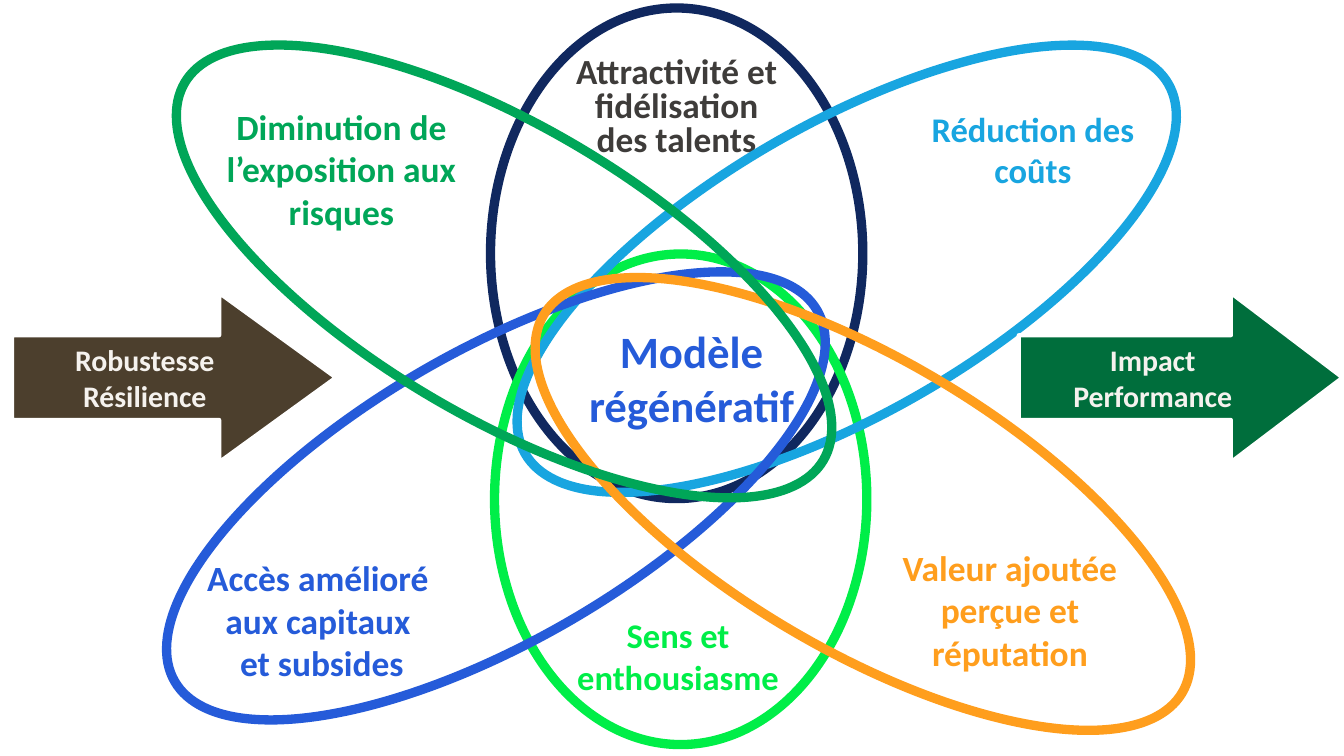
from pptx import Presentation
from pptx.dml.color import RGBColor
from pptx.enum.shapes import MSO_SHAPE
from pptx.enum.text import MSO_ANCHOR, PP_ALIGN
from pptx.util import Inches, Pt

NAVY = RGBColor(0x10, 0x28, 0x5F)
LIME = RGBColor(0x00, 0xEE, 0x48)
SKY = RGBColor(0x18, 0xA5, 0xE0)
BLUE = RGBColor(0x25, 0x5B, 0xD9)
ORANGE = RGBColor(0xFF, 0x9E, 0x1D)
GREEN = RGBColor(0x00, 0xA6, 0x58)
FOREST = RGBColor(0x00, 0x6E, 0x3C)
BROWN = RGBColor(0x4C, 0x3F, 0x2D)
CHARCOAL = RGBColor(0x3E, 0x3C, 0x3A)
CREAM = RGBColor(0xF5, 0xF2, 0xEE)
WHITE = RGBColor(0xFF, 0xFF, 0xFF)

UPRIGHT_PETAL = (2.77, 3.65)
TILTED_PETAL = (2.16, 5.52)
LABEL = (1.83, 0.98)
ARROW = (2.41, 1.26)
ARROW_TOP = 2.18

# Each petal: left, top, size, rotation, line colour;
# then its label: text, left, top, size, font size, colour, line spacing
PETALS = [
    ((3.65, 0.06, UPRIGHT_PETAL, 0, NAVY),
     ("Attractivité et fidélisation des talents", 4.12, 0.33, LABEL, 18.9, CHARCOAL, 0.8)),
    ((3.68, 1.89, UPRIGHT_PETAL, 0, LIME),
     ("Sens et enthousiasme", 4.13, 4.47, LABEL, 18.5, LIME, None)),
    ((5.22, -0.76, TILTED_PETAL, 60.1, SKY),
     ("Réduction des coûts", 6.77, 0.7, LABEL, 18.5, SKY, None)),
    ((2.61, 0.93, TILTED_PETAL, 60, BLUE),
     ("Accès amélioré \vaux capitaux \vet subsides", 1.29, 4.04, (2.21, 1.01), 19, BLUE, None)),
    ((5.34, 0.99, TILTED_PETAL, 120.6, ORANGE),
     ("Valeur ajoutée perçue et réputation", 6.6, 3.96, LABEL, 19, ORANGE, None)),
    ((2.67, -0.74, TILTED_PETAL, 120.6, GREEN),
     ("Diminution de l’exposition aux risques", 1.53, 0.68, (2.02, 1.21), 19, GREEN, None)),
]

# left, head length, fill, text
ARROWS = [
    (7.58, 0.66, FOREST, "Impact\nPerformance"),
    (0.09, 0.69, BROWN, "Robustesse\nRésilience"),
]


def write_text(text_frame, text, *, size, color, line_spacing=None):
    """Fill the frame with centred bold text, one paragraph per line."""
    text_frame.word_wrap = True
    text_frame.text = text
    for paragraph in text_frame.paragraphs:
        paragraph.alignment = PP_ALIGN.CENTER
        if line_spacing:
            paragraph.line_spacing = line_spacing
        for run in paragraph.runs:
            run.font.name = "Calibri"
            run.font.size = Pt(size)
            run.font.bold = True
            run.font.color.rgb = color


def add_label(slide, text, left, top, size, font_size, color, line_spacing=None):
    box = slide.shapes.add_textbox(Inches(left), Inches(top), *map(Inches, size))
    frame = box.text_frame
    frame.margin_left = frame.margin_right = Inches(0.1)
    frame.margin_top = frame.margin_bottom = Inches(0.1)
    write_text(frame, text, size=font_size, color=color, line_spacing=line_spacing)


def add_petal(slide, left, top, size, rotation, color):
    petal = slide.shapes.add_shape(
        MSO_SHAPE.OVAL, Inches(left), Inches(top), *map(Inches, size))
    petal.shadow.inherit = False
    petal.rotation = rotation
    petal.fill.background()
    petal.line.color.rgb = color
    petal.line.width = Pt(5)


def add_arrow(slide, left, head_length, color, text):
    arrow = slide.shapes.add_shape(
        MSO_SHAPE.RIGHT_ARROW, Inches(left), Inches(ARROW_TOP), *map(Inches, ARROW))
    arrow.shadow.inherit = False
    arrow.adjustments[1] = head_length
    arrow.fill.solid()
    arrow.fill.fore_color.rgb = color
    arrow.line.color.rgb = WHITE
    arrow.line.width = Pt(2.25)
    arrow.text_frame.vertical_anchor = MSO_ANCHOR.MIDDLE
    write_text(arrow.text_frame, text, size=16, color=CREAM)


def main():
    presentation = Presentation()
    presentation.slide_width = Inches(10)
    presentation.slide_height = Inches(10 * 9 / 16)
    slide = presentation.slides.add_slide(presentation.slide_layouts[6])

    add_label(slide, "Modèle régénératif", 3.84, 2.31, (2.61, 1.53), 24, BLUE)
    for petal, label in PETALS:
        add_petal(slide, *petal)
        add_label(slide, *label)
    for arrow in ARROWS:
        add_arrow(slide, *arrow)

    presentation.save("out.pptx")


if __name__ == "__main__":
    main()
